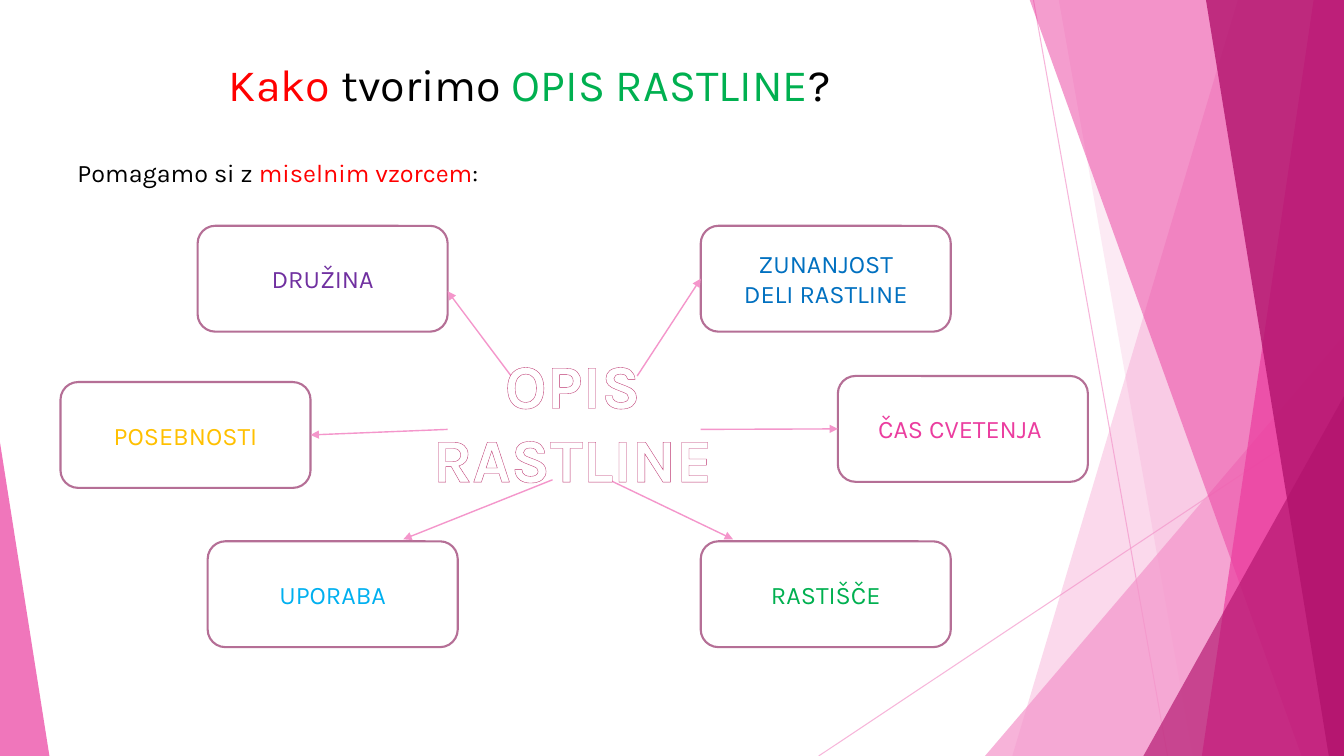
from pptx import Presentation
from pptx.dml.color import RGBColor
from pptx.enum.shapes import MSO_CONNECTOR, MSO_SHAPE
from pptx.enum.text import MSO_ANCHOR, MSO_AUTO_SIZE, PP_ALIGN
from pptx.oxml.ns import qn
from pptx.util import Inches, Pt
from lxml import etree

ROUND, TRI = MSO_SHAPE.ROUNDED_RECTANGLE, MSO_SHAPE.ISOSCELES_TRIANGLE
STRAIGHT = MSO_CONNECTOR.STRAIGHT
LEFT, CENTER = PP_ALIGN.LEFT, PP_ALIGN.CENTER
MIDDLE, TOP = MSO_ANCHOR.MIDDLE, MSO_ANCHOR.TOP
GROW = MSO_AUTO_SIZE.SHAPE_TO_FIT_TEXT

WHITE = RGBColor(0xFF, 0xFF, 0xFF)
BLACK = RGBColor(0, 0, 0)
RED = RGBColor(0xFF, 0, 0)
GREEN = RGBColor(0, 0xB0, 0x50)
BLUE = RGBColor(0, 0x70, 0xC0)
SKY = RGBColor(0, 0xB0, 0xF0)
GOLD = RGBColor(0xFF, 0xC0, 0)
PURPLE = RGBColor(0x70, 0x30, 0xA0)
PINK = RGBColor(0xF4, 0x96, 0xCB)
ROSE = RGBColor(0xEB, 0x3D, 0x9F)
WINE = RGBColor(0xB2, 0x13, 0x6D)
MAUVE = RGBColor(0xB5, 0x6F, 0x96)
BERRY = RGBColor(0xBC, 0x35, 0x6F)

WIDE, HIGH = 13.33, 7.5
BOX_W, BOX_H = 2.48, 1.05


class Board:
    """Holds the text style and the current slide."""

    font = {"name": "Karla", "size": Pt(18), "bold": False}

    def __init__(self, slide):
        self.slide = slide
        self.shapes = slide.shapes

    def fade(self, shape, alpha):
        color = shape._element.spPr.find(".//" + qn("a:srgbClr"))
        etree.SubElement(color, qn("a:alpha"), val=str(alpha * 1000))

    def paint(self, shape, color, alpha):
        shape.shadow.inherit = False
        shape.fill.solid()
        shape.fill.fore_color.rgb = color
        shape.line.fill.background()
        self.fade(shape, alpha)

    def band(self, points, color, alpha):
        first, *rest = [(Inches(x), Inches(y)) for x, y in points]
        form = self.shapes.build_freeform(*first, scale=1.0)
        form.add_line_segments(rest, close=True)
        self.paint(form.convert_to_shape(), color, alpha)

    def wedge(self, x, y, w, apex, color, alpha):
        shape = self.shapes.add_shape(
            TRI, Inches(x), Inches(y), Inches(w), Inches(HIGH - y))
        shape.adjustments[0] = apex
        self.paint(shape, color, alpha)

    def line(self, start, end, width, alpha=None, arrow=False, join=None):
        link = self.shapes.add_connector(
            STRAIGHT, *[Inches(v) for v in (*start, *end)])
        if join:
            link.end_connect(*join)
        link.line.color.rgb = PINK
        link.line.width = Pt(width)
        props = link._element.spPr
        if alpha:
            self.fade(link, alpha)
        if arrow:
            etree.SubElement(props.find(qn("a:ln")), qn("a:tailEnd"), type="triangle")
        etree.SubElement(props, qn("a:effectLst"))

    def fill_in(self, frame, lines, align, **style):
        frame.word_wrap = True
        for i, runs in enumerate(lines):
            para = frame.add_paragraph() if i else frame.paragraphs[0]
            para.alignment = align
            for words, color in runs:
                run = para.add_run()
                run.text = words
                for key, value in {**self.font, **style}.items():
                    setattr(run.font, key, value)
                run.font.color.rgb = color

    def text(self, x, y, w, h, runs, align=LEFT, **style):
        box = self.shapes.add_textbox(*[Inches(v) for v in (x, y, w, h)])
        self.fill_in(box.text_frame, [runs], align, **style)
        box.text_frame.auto_size = GROW
        box.text_frame.vertical_anchor = TOP
        return box

    def outline(self, box, color, width):
        for para in box.text_frame.paragraphs:
            for run in para.runs:
                edge = etree.Element(qn("a:ln"), w=str(Pt(width)))
                fill = etree.SubElement(edge, qn("a:solidFill"))
                etree.SubElement(fill, qn("a:srgbClr"), val=str(color))
                run._r.get_or_add_rPr().insert(0, edge)

    def card(self, x, y, words, color):
        shape = self.shapes.add_shape(
            ROUND, Inches(x), Inches(y), Inches(BOX_W), Inches(BOX_H))
        shape.shadow.inherit = False
        shape.fill.solid()
        shape.fill.fore_color.rgb = WHITE
        shape.line.color.rgb = MAUVE
        shape.line.width = Pt(1.5)
        shape.text_frame.vertical_anchor = MIDDLE
        self.fill_in(shape.text_frame, [[(part, color)] for part in words], CENTER)
        return shape


def main():
    deck = Presentation()
    deck.slide_width, deck.slide_height = Inches(WIDE), Inches(HIGH)
    board = Board(deck.slides.add_slide(deck.slide_layouts[6]))

    # Backdrop: thin lines, slanted bands to the right edge, corner wedges
    board.line((10.25, 0), (11.58, HIGH), 0.75, alpha=70)
    board.line((WIDE, 4.03), (8.12, HIGH), 0.75, alpha=70)

    def slant(top, foot, color, alpha):
        board.band([(top, -0.01), (WIDE, -0.01), (WIDE, HIGH), (foot, HIGH)],
                   color, alpha)

    slant(12.28, 10.04, PINK, 36)
    slant(10.5, 11.83, PINK, 20)
    board.wedge(9.77, 3.33, 3.56, 1, PINK, 72)
    slant(10.21, 12.91, ROSE, 50)
    slant(13.03, 11.92, ROSE, 70)
    slant(11.96, 13.18, WINE, 80)
    board.wedge(11.34, 3.93, 1.99, 1, WINE, 66)
    board.wedge(0, 4.39, 0.49, 0, ROSE, 70)

    # Title and lead
    board.text(1.84, 0.51, 6.83, 0.64,
               [("Kako", RED), (" tvorimo ", BLACK),
                ("OPIS RASTLINE", GREEN), ("?", BLACK)],
               CENTER, size=Pt(32))
    board.text(0.67, 1.51, 4.32, 0.4,
               [("Pomagamo si z ", BLACK), ("miselnim vzorcem", RED), (":", BLACK)])

    # Topic cards
    looks = board.card(6.95, 2.24, ["ZUNANJOST", "DELI RASTLINE"], BLUE)
    bloom = board.card(8.31, 3.73, ["ČAS CVETENJA "], ROSE)
    board.card(6.95, 5.37, ["RASTIŠČE"], GREEN)
    board.card(2.06, 5.37, ["UPORABA"], SKY)
    traits = board.card(0.6, 3.79, ["POSEBNOSTI"], GOLD)
    board.card(1.96, 2.24, ["DRUŽINA"], PURPLE)

    # Arrows from the centre to the cards
    for start, end, join in [
        ((6.32, 3.73), (6.95, 2.76), (looks, 1)),
        ((5.07, 3.73), (4.44, 2.89), None),
        ((6.95, 4.26), (8.31, 4.26), (bloom, 1)),
        ((6.04, 4.76), (7.27, 5.35), None),
        ((5.48, 4.76), (4, 5.35), None),
        ((4.44, 4.26), (3.08, 4.31), (traits, 3)),
    ]:
        board.line(start, end, 1, arrow=True, join=join)

    # Centre words
    core = board.text(3.84, 3.39, 3.68, 1.58, [("OPIS RASTLINE", WHITE)],
                      CENTER, size=Pt(44), bold=True)
    board.outline(core, BERRY, 0.52)

    deck.save("out.pptx")


if __name__ == "__main__":
    main()
